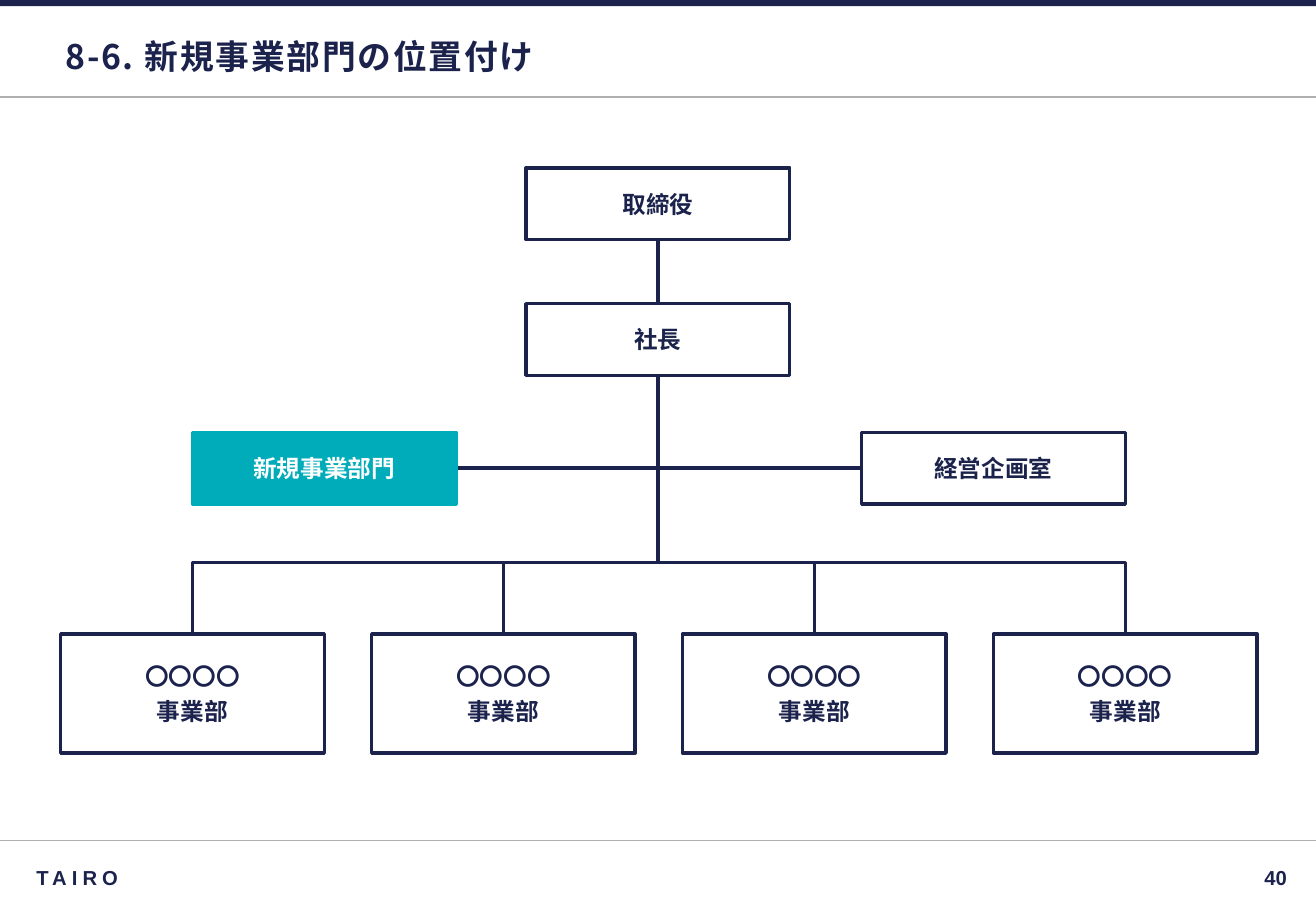
"""Build an organisation chart slide that places the new business division."""
from dataclasses import dataclass

from lxml import etree
from pptx import Presentation
from pptx.dml.color import RGBColor
from pptx.enum import shapes, text
from pptx.oxml import ns
from pptx.util import Cm, Pt

NAVY = RGBColor(0x1B, 0x22, 0x4C)
TEAL = RGBColor(0x00, 0xAC, 0xBA)
GREY = RGBColor(0xAF, 0xAF, 0xAF)
WHITE = RGBColor(0xFF, 0xFF, 0xFF)
JAPANESE_FONT = "Noto Sans CJK JP"

PAGE_WIDTH, PAGE_HEIGHT = 27.51, 19.05
CENTRE = PAGE_WIDTH / 2
UNIT_WIDTH, UNIT_HEIGHT = 5.51, 1.5
DIVISION_LEFT, DIVISION_TOP, DIVISION_PITCH = 1.27, 13.26, 6.5
DIVISION_HEIGHT, DIVISION_COUNT = 2.49, 4
DIRECTOR_TOP, PRESIDENT_TOP, STAFF_TOP = 3.51, 6.35, 9.04
BRANCH_LEVEL = 11.76


@dataclass(frozen=True)
class Unit:
    label: str
    left: float
    top: float
    height: float = UNIT_HEIGHT
    fill: RGBColor = WHITE
    line: RGBColor = NAVY
    color: RGBColor = NAVY
    inset: float = 0.25
    space_before: float = 0


@dataclass(frozen=True)
class Line:
    start: tuple[float, float]
    end: tuple[float, float]
    color: RGBColor = NAVY
    width: float = 2


def write(box, content: str, *, size: float = 14, color: RGBColor = NAVY,
          font: str = "Arial", align=text.PP_ALIGN.LEFT, inset: float = 0.1,
          spacing: float = 0, space_before: float = 0) -> None:
    frame = box.text_frame
    frame.word_wrap = True
    frame.vertical_anchor = text.MSO_ANCHOR.MIDDLE
    frame.margin_left = frame.margin_right = Cm(inset)
    frame.margin_top = frame.margin_bottom = Cm(0.1)
    frame.text = content
    for para in frame.paragraphs:
        para.alignment = align
        para.space_before = Pt(space_before)
        for span in para.runs:
            span.font.size, span.font.bold, span.font.name = Pt(size), True, font
            span.font.color.rgb = color
            properties = span.font._element
            properties.set("spc", str(int(spacing * 100)))
            etree.SubElement(properties, ns.qn("a:ea"), typeface=JAPANESE_FONT)


def draw_unit(page, unit: Unit) -> None:
    box = page.shapes.add_shape(
        shapes.MSO_SHAPE.RECTANGLE, Cm(unit.left), Cm(unit.top),
        Cm(UNIT_WIDTH), Cm(unit.height))
    box.shadow.inherit = False
    box.fill.solid()
    box.fill.fore_color.rgb = unit.fill
    box.line.color.rgb = unit.line
    box.line.width = Pt(2)
    write(box, unit.label, color=unit.color, align=text.PP_ALIGN.CENTER,
          inset=unit.inset, space_before=unit.space_before)


def draw_line(page, line: Line) -> None:
    connector = page.shapes.add_connector(
        shapes.MSO_CONNECTOR.STRAIGHT, *map(Cm, line.start + line.end))
    connector.line.color.rgb = line.color
    connector.line.width = Pt(line.width)
    etree.SubElement(connector._element.spPr, ns.qn("a:effectLst"))


def draw_branch(page, left: float, right: float) -> None:
    builder = page.shapes.build_freeform(Cm(left), Cm(DIVISION_TOP))
    corners = [(left, BRANCH_LEVEL), (right, BRANCH_LEVEL), (right, DIVISION_TOP)]
    builder.add_line_segments([(Cm(x), Cm(y)) for x, y in corners], close=False)
    branch = builder.convert_to_shape()
    branch.shadow.inherit = False
    branch.fill.background()
    branch.line.color.rgb = NAVY
    branch.line.width = Pt(2)


def add_text(page, content: str, left: float, top: float, width: float,
             height: float, **style) -> None:
    box = page.shapes.add_textbox(Cm(left), Cm(top), Cm(width), Cm(height))
    write(box, content, **style)


def draw_frame(page) -> None:
    for level in (2.03, 17.58):
        draw_line(page, Line((0, level), (PAGE_WIDTH, level), GREY, 0.75))
    band = page.shapes.add_shape(
        shapes.MSO_SHAPE.RECTANGLE, 0, 0, Cm(PAGE_WIDTH), Cm(0.13))
    band.shadow.inherit = False
    band.fill.solid()
    band.fill.fore_color.rgb = NAVY
    band.line.fill.background()
    add_text(page, "8-6. 新規事業部門の位置付け", 1.27, 0.53, 25, 1.3,
             size=20, font=JAPANESE_FONT, spacing=1)
    add_text(page, "TAIRO", 0.51, 17.96, 22, 0.79, size=12, inset=0.25, spacing=3)
    add_text(page, "40", 23.01, 17.96, 3.99, 0.79, size=12,
             align=text.PP_ALIGN.RIGHT)


def draw_chart(page) -> None:
    lefts = [DIVISION_LEFT + i * DIVISION_PITCH for i in range(DIVISION_COUNT)]
    centres = [left + UNIT_WIDTH / 2 for left in lefts]
    middle_left = CENTRE - UNIT_WIDTH / 2
    planning_left = centres[-1] - UNIT_WIDTH
    staff_level = STAFF_TOP + UNIT_HEIGHT / 2

    lines = [
        Line((CENTRE, DIRECTOR_TOP + UNIT_HEIGHT), (CENTRE, PRESIDENT_TOP)),
        Line((CENTRE, PRESIDENT_TOP + UNIT_HEIGHT), (CENTRE, BRANCH_LEVEL)),
        Line((planning_left, staff_level), (centres[0] + UNIT_WIDTH, staff_level)),
    ]
    units = [
        Unit("取締役", middle_left, DIRECTOR_TOP),
        Unit("社長", middle_left, PRESIDENT_TOP),
        Unit("新規事業部門", centres[0], STAFF_TOP, fill=TEAL, line=TEAL, color=WHITE),
        Unit("経営企画室", planning_left, STAFF_TOP),
    ]
    units += [Unit("〇〇〇〇\n事業部", left, DIVISION_TOP, DIVISION_HEIGHT,
                   inset=0.1, space_before=4) for left in lefts]

    for line in lines:
        draw_line(page, line)
    for i in range(DIVISION_COUNT // 2):
        draw_branch(page, centres[i], centres[-1 - i])
    for unit in units:
        draw_unit(page, unit)


def main() -> None:
    deck = Presentation()
    deck.slide_width, deck.slide_height = Cm(PAGE_WIDTH), Cm(PAGE_HEIGHT)
    page = deck.slides.add_slide(deck.slide_layouts[6])
    draw_frame(page)
    draw_chart(page)
    deck.save("out.pptx")


if __name__ == "__main__":
    main()
